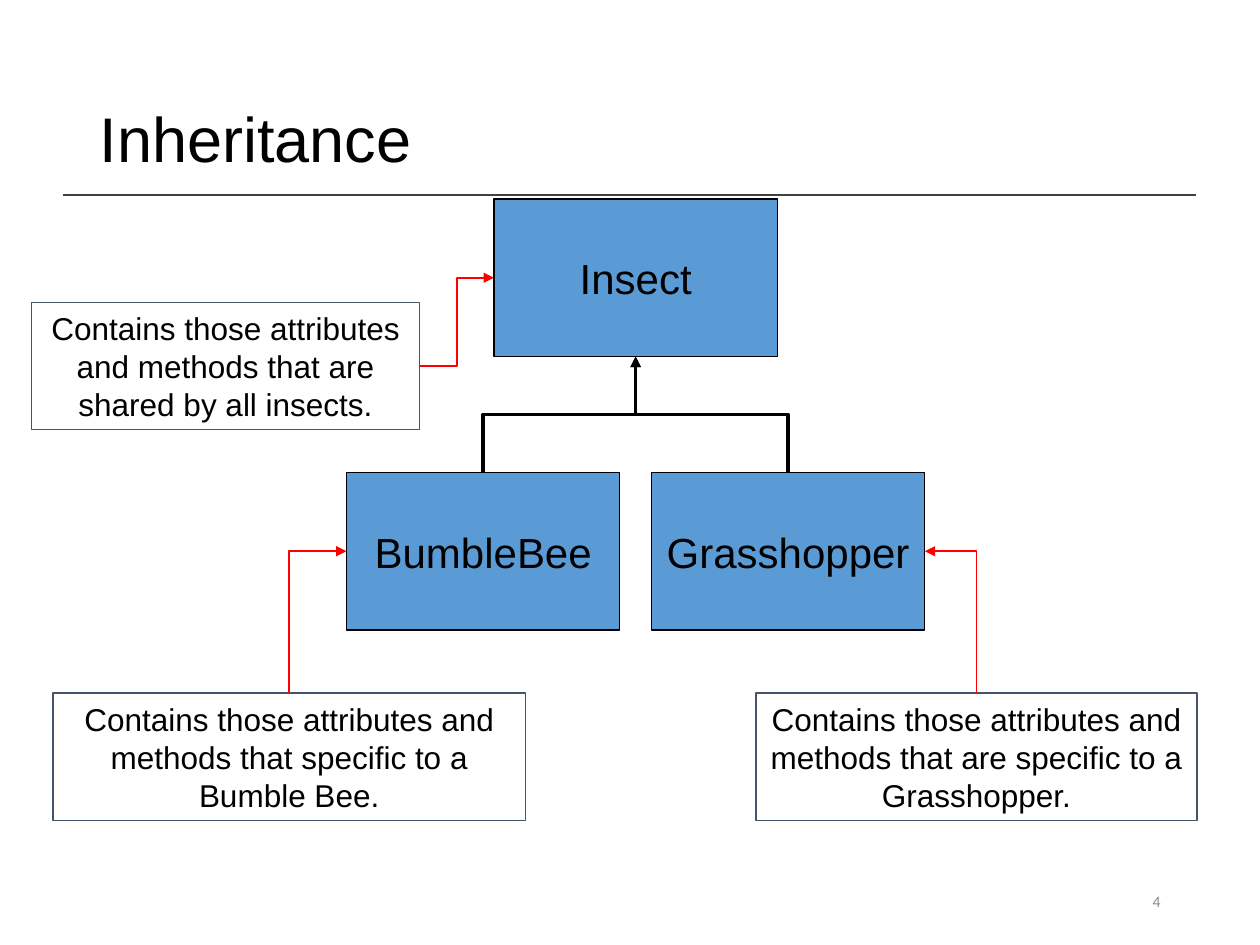
import pptx
import pptx.util
import pptx.dml.color
import pptx.enum.shapes
import pptx.enum.text
import pptx.oxml
import pptx.oxml.ns

Inches = pptx.util.Inches
ALIGN = pptx.enum.text.PP_ALIGN
CONNECTOR = pptx.enum.shapes.MSO_CONNECTOR
TOP, LEFT, BOTTOM, RIGHT = range(4)

CLASSES = {
    "Insect": (3.92, 1.58, 2.25, 1.25),
    "Grasshopper": (5.17, 3.75, 2.17, 1.25),
    "BumbleBee": (2.75, 3.75, 2.17, 1.25),
}
NOTES = [
    ("Contains those attributes and methods that are shared by all insects.",
     (0.25, 2.4, 3.08, 1.01), RIGHT, "Insect", LEFT),
    ("Contains those attributes and methods that specific to a Bumble Bee.",
     (0.42, 5.5, 3.75, 1.01), TOP, "BumbleBee", LEFT),
    ("Contains those attributes and methods that are specific to a Grasshopper.",
     (6, 5.5, 3.5, 1.01), TOP, "Grasshopper", RIGHT),
]


def color(value):
    return pptx.dml.color.RGBColor.from_string(value)


def write(shape, text, size, align, font="Arial", ink="000000", wrap=True):
    frame = shape.text_frame
    frame.text = text
    frame.word_wrap = wrap
    frame.vertical_anchor = pptx.enum.text.MSO_ANCHOR.MIDDLE
    paragraph = frame.paragraphs[0]
    paragraph.alignment = align
    run_font = paragraph.runs[0].font
    run_font.name = font
    run_font.size = pptx.util.Pt(size)
    run_font.color.rgb = color(ink)
    return paragraph


def add_box(box, text, size, line, fill=None, wrap=True):
    shape = slide.shapes.add_shape(
        pptx.enum.shapes.MSO_SHAPE.RECTANGLE, *map(Inches, box))
    shape.shadow.inherit = False
    if fill:
        shape.fill.solid()
        shape.fill.fore_color.rgb = color(fill)
    else:
        shape.fill.background()
    shape.line.color.rgb = color(line)
    shape.line.width = pptx.util.Pt(0.75)
    write(shape, text, size, ALIGN.CENTER, wrap=wrap)
    return shape


def style_line(connector, ink, width):
    connector.line.color.rgb = color(ink)
    connector.line.width = pptx.util.Pt(width)
    connector._element.spPr.append(pptx.oxml.parse_xml(
        "<a:effectLst %s/>" % pptx.oxml.ns.nsdecls("a")))


def add_elbow(source, source_side, target, target_side, ink, width):
    connector = slide.shapes.add_connector(CONNECTOR.ELBOW, 0, 0, 0, 0)
    connector.begin_connect(source, source_side)
    connector.end_connect(target, target_side)
    style_line(connector, ink, width)
    connector.line._get_or_add_ln().append(pptx.oxml.parse_xml(
        '<a:tailEnd type="triangle" %s/>' % pptx.oxml.ns.nsdecls("a")))
    if source_side == TOP:
        turn_upward(connector, target_side)


def turn_upward(connector, target_side):
    goes_left = connector.end_x < connector.begin_x
    center_x = (connector.begin_x + connector.end_x) // 2
    center_y = (connector.begin_y + connector.end_y) // 2
    width = abs(connector.end_y - connector.begin_y)
    height = abs(connector.end_x - connector.begin_x)
    connector.left, connector.top = center_x - width // 2, center_y - height // 2
    connector.width, connector.height = width, height
    properties = connector._element.spPr
    transform = properties.find(pptx.oxml.ns.qn("a:xfrm"))
    transform.set("rot", str((90 if goes_left else 270) * 60000))
    transform.set("flipH", "1" if goes_left else "0")
    transform.set("flipV", "0")
    if target_side != BOTTOM:
        properties.find(pptx.oxml.ns.qn("a:prstGeom")).set("prst", "bentConnector2")


presentation = pptx.Presentation()
presentation.slide_width = Inches(10)
presentation.slide_height = Inches(7.5)
slide = presentation.slides.add_slide(presentation.slide_layouts[5])

title = slide.shapes.title
title.left, title.top, title.width, title.height = map(Inches, (0.69, 0.4, 8.62, 1.45))
write(title, "Inheritance", 36, ALIGN.LEFT).line_spacing = 0.9
rule = slide.shapes.add_connector(
    CONNECTOR.STRAIGHT, *map(Inches, (0.5, 1.55, 9.49, 1.55)))
style_line(rule, "404040", 1)

classes = {name: add_box(box, name, 24, "000000", "5B9BD5", wrap=False)
           for name, box in CLASSES.items()}
for child in ("BumbleBee", "Grasshopper"):
    add_elbow(classes[child], TOP, classes["Insect"], BOTTOM, "000000", 2)

for text, box, note_side, name, class_side in NOTES:
    note = add_box(box, text, 18, "44546A")
    add_elbow(note, note_side, classes[name], class_side, "FF0000", 1)

number = slide.shapes.add_textbox(*map(Inches, (7.06, 6.95, 2.25, 0.4)))
write(number, "4", 9, ALIGN.RIGHT, "Calibri", "8C8C8C")

presentation.save("out.pptx")
